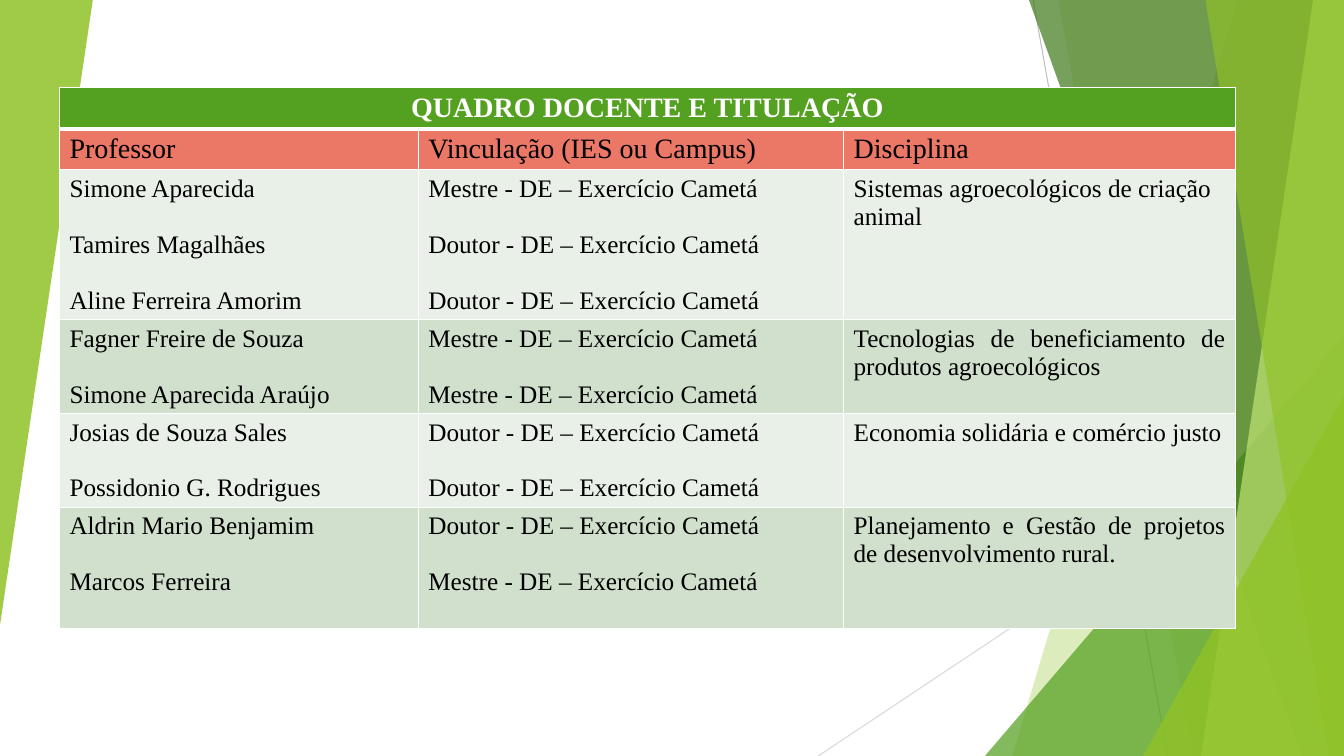
"""Build the slide with the table of teaching staff and their degrees."""

from dataclasses import dataclass

import lxml.etree
import pptx
import pptx.dml.color
import pptx.enum.shapes
import pptx.enum.text
import pptx.oxml.ns
import pptx.util

Pt = pptx.util.Pt
Align = pptx.enum.text.PP_ALIGN
qn = pptx.oxml.ns.qn

WIDTH, HEIGHT = 960, 540
FONT = "Times New Roman"
LINE_PITCH = 19.93
COLUMN_WIDTHS = (256.3, 303.8, 280)
ROW_HEIGHTS = (29.4, 29.4, 107, 67, 67, 86.8)
COLORS = {
    "lime": "90C226",
    "green": "54A021",
    "dark": "3F7819",
    "pale": "C0E474",
    "gray": "BFBFBF",
    "light_gray": "D9D9D9",
    "coral": "EB7766",
    "band_light": "E9F0E8",
    "band_dark": "D1DFCD",
    "white": "FFFFFF",
    "black": "000000",
}


@dataclass(frozen=True)
class Ray:
    """A thin line behind the facets."""

    start: tuple[float, float]
    end: tuple[float, float]
    color: str


@dataclass(frozen=True)
class Facet:
    """A band from the top edge to the bottom edge, closed by the right side."""

    top_x: float
    bottom_x: float
    color: str
    opacity: int


@dataclass(frozen=True)
class Wedge:
    """A right triangle with its apex over the right corner."""

    left: float
    top: float
    width: float
    height: float
    color: str
    opacity: int
    rotation: int = 0


@dataclass(frozen=True)
class Course:
    """A course with its teachers and their positions."""

    teachers: tuple[str, ...]
    positions: tuple[str, ...]
    subject: str
    alignment: Align = Align.JUSTIFY


RAYS = (
    Ray((738, 0), (834, HEIGHT), "gray"),
    Ray((WIDTH, 290), (584.5, HEIGHT), "light_gray"),
)
DECORATION = (
    Facet(884, 723, "lime", 30),
    Facet(756, 852, "lime", 20),
    Wedge(703.5, 240, 256.5, 300, "green", 72),
    Facet(735, 929.5, "dark", 70),
    Facet(938, 858, "pale", 70),
    Facet(861, 949, "lime", 65),
    Wedge(816.5, 283, 143.5, 257, "lime", 80),
    Wedge(0, 0, 66.3, 446.4, "lime", 85, 180),
)
HEADINGS = ("Professor", "Vinculação (IES ou Campus)", "Disciplina")
MASTER = "Mestre - DE – Exercício Cametá"
DOCTOR = "Doutor - DE – Exercício Cametá"
COURSES = (
    Course(
        ("Simone Aparecida", "Tamires Magalhães", "Aline Ferreira Amorim"),
        (MASTER, DOCTOR, DOCTOR),
        "Sistemas agroecológicos de criação animal",
        Align.LEFT,
    ),
    Course(
        ("Fagner Freire de Souza", "Simone Aparecida Araújo"),
        (MASTER, MASTER),
        "Tecnologias de beneficiamento de produtos agroecológicos",
    ),
    Course(
        ("Josias de Souza Sales", "Possidonio G. Rodrigues"),
        (DOCTOR, DOCTOR),
        "Economia solidária e comércio justo",
    ),
    Course(
        ("Aldrin Mario Benjamim", "Marcos Ferreira"),
        (DOCTOR, MASTER),
        "Planejamento e Gestão de projetos de desenvolvimento rural.",
    ),
)


def rgb(name: str) -> pptx.dml.color.RGBColor:
    """Return the named colour."""
    return pptx.dml.color.RGBColor.from_string(COLORS[name])


def draw_ray(slide, ray: Ray) -> None:
    """Draw a thin line without a shadow."""
    connector = slide.shapes.add_connector(
        pptx.enum.shapes.MSO_CONNECTOR.STRAIGHT, *map(Pt, ray.start + ray.end)
    )
    connector.line.color.rgb = rgb(ray.color)
    connector.line.width = Pt(0.75)
    lxml.etree.SubElement(connector._element.spPr, qn("a:effectLst"))


def draw_decoration(slide, part: Facet | Wedge) -> None:
    """Draw one translucent facet or wedge."""
    if isinstance(part, Facet):
        builder = slide.shapes.build_freeform(part.top_x, 0, scale=Pt(1))
        builder.add_line_segments(
            [(WIDTH, 0), (WIDTH, HEIGHT), (part.bottom_x, HEIGHT)], close=True
        )
        shape = builder.convert_to_shape()
    else:
        shape = slide.shapes.add_shape(
            pptx.enum.shapes.MSO_SHAPE.ISOSCELES_TRIANGLE,
            Pt(part.left), Pt(part.top), Pt(part.width), Pt(part.height),
        )
        shape.adjustments[0] = 1
        shape.rotation = part.rotation
    shape.shadow.inherit = False
    shape.line.fill.background()
    shape.fill.solid()
    shape.fill.fore_color.rgb = rgb(part.color)
    color = shape._element.spPr.find(".//" + qn("a:srgbClr"))
    lxml.etree.SubElement(color, qn("a:alpha"), val=str(part.opacity * 1000))


def write_text(frame, *lines: str, size: float = 18, color: str = "black",
               bold: bool = False, alignment: Align = Align.JUSTIFY) -> None:
    """Write each line as a paragraph, one blank line apart."""
    for index, line in enumerate(lines):
        paragraph = frame.add_paragraph() if index else frame.paragraphs[0]
        paragraph.alignment = alignment
        paragraph.space_before = Pt(LINE_PITCH if index else 0)
        run = paragraph.add_run()
        run.text = line
        run.font.name = FONT
        run.font.size = Pt(size)
        run.font.bold = bold
        run.font.color.rgb = rgb(color)


def style_cell(cell, fill: str, top: float = 1, bottom: float = 1) -> None:
    """Set the fill and the white borders of a cell."""
    cell.fill.solid()
    cell.fill.fore_color.rgb = rgb(fill)
    properties = cell._tc.get_or_add_tcPr()
    borders = {"lnL": 1, "lnR": 1, "lnT": top, "lnB": bottom}
    for index, (side, width) in enumerate(borders.items()):
        line = properties.makeelement(qn("a:" + side), {"w": str(Pt(width))})
        solid = lxml.etree.SubElement(line, qn("a:solidFill"))
        lxml.etree.SubElement(solid, qn("a:srgbClr"), val=COLORS["white"])
        properties.insert(index, line)


def draw_table(slide) -> None:
    """Draw the table of teachers, positions and courses."""
    table = slide.shapes.add_table(
        len(ROW_HEIGHTS), len(COLUMN_WIDTHS), Pt(42.5), Pt(62.5),
        Pt(sum(COLUMN_WIDTHS)), Pt(sum(ROW_HEIGHTS)),
    ).table
    for column, width in zip(table.columns, COLUMN_WIDTHS):
        column.width = Pt(width)
    for row, height in zip(table.rows, ROW_HEIGHTS):
        row.height = Pt(height)
    table.cell(0, 0).merge(table.cell(0, 2))
    write_text(table.cell(0, 0).text_frame, "QUADRO DOCENTE E TITULAÇÃO",
               size=20, color="white", bold=True, alignment=Align.CENTER)
    for column, heading in enumerate(HEADINGS):
        style_cell(table.cell(0, column), "green", bottom=3)
        style_cell(table.cell(1, column), "coral", top=3)
        write_text(table.cell(1, column).text_frame, heading, size=20)
    for row, course in enumerate(COURSES, start=2):
        contents = (course.teachers, course.positions, (course.subject,))
        for column, lines in enumerate(contents):
            cell = table.cell(row, column)
            style_cell(cell, "band_dark" if row % 2 else "band_light")
            write_text(cell.text_frame, *lines, alignment=course.alignment)


def main() -> None:
    """Build and save the presentation."""
    presentation = pptx.Presentation()
    presentation.slide_width, presentation.slide_height = Pt(WIDTH), Pt(HEIGHT)
    slide = presentation.slides.add_slide(presentation.slide_layouts[6])
    for ray in RAYS:
        draw_ray(slide, ray)
    for part in DECORATION:
        draw_decoration(slide, part)
    draw_table(slide)
    presentation.save("out.pptx")


if __name__ == "__main__":
    main()
